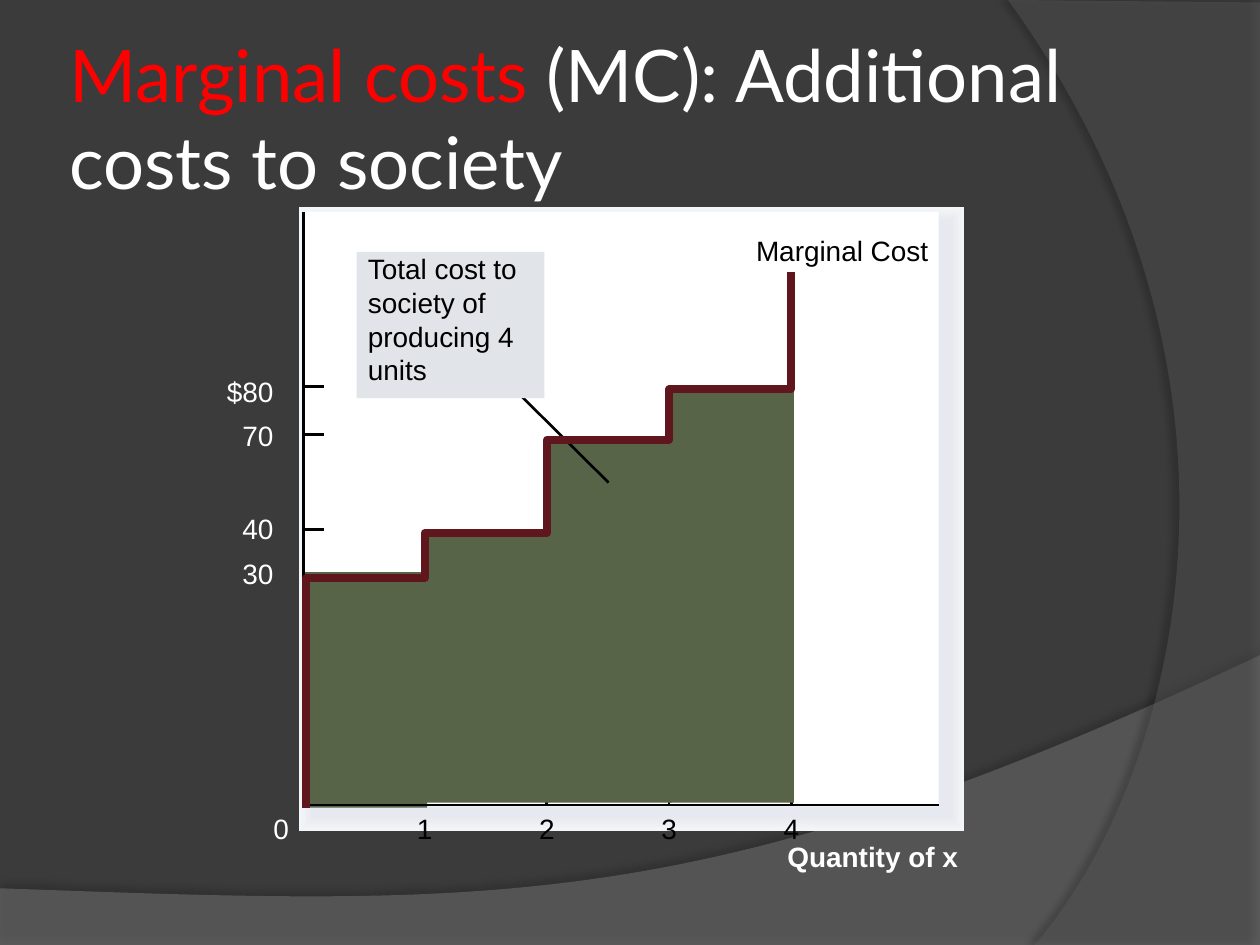
"""Build the slide on marginal costs to society with its stepped cost diagram."""
from dataclasses import dataclass

from lxml.etree import SubElement
from pptx import Presentation
from pptx.dml.color import RGBColor
from pptx.enum.shapes import MSO_CONNECTOR as Connector, MSO_SHAPE as Shape
from pptx.enum.text import MSO_ANCHOR as Anchor, MSO_AUTO_SIZE as AutoSize, PP_ALIGN as Align
from pptx.oxml.ns import qn
from pptx.util import Inches, Pt


@dataclass(frozen=True)
class Theme:
    back: str = "3B3B3B"
    lower_wave: str = "7F7F7F"
    side_wave: str = "5E5E5E"
    light: str = "FFFFFF"
    dark: str = "000000"
    accent: str = "FF0000"
    area: str = "576448"
    step: str = "5F161D"
    callout: str = "E1E5E9"
    title_font: str = "Lato"
    label_font: str = "Arial"
    title_size: float = 41.4
    label_size: float = 16
    thin: float = 1.5
    thick: float = 4.5


theme = Theme()
deck = Presentation()
deck.slide_width, deck.slide_height = Inches(10), Inches(7.5)
page = deck.slides.add_slide(deck.slide_layouts[5])
page.background.fill.solid()
page.background.fill.fore_color.rgb = RGBColor.from_string(theme.back)
shapes = page.shapes


def finish(shape, fill=None, line=None, width=theme.thin):
    """Set fill and line, clear the shadow and return the effect list."""
    if fill:
        shape.fill.solid()
        shape.fill.fore_color.rgb = RGBColor.from_string(fill)
    elif hasattr(shape, "fill"):
        shape.fill.background()
    if line:
        shape.line.color.rgb = RGBColor.from_string(line)
        shape.line.width = Pt(width)
    else:
        shape.line.fill.background()
    return SubElement(shape.element.spPr, qn("a:effectLst"))


def label(text, left, top, width, height=0.27, color=theme.light, align=Align.LEFT, wrap=False):
    """Add a text box without margins and return its paragraph."""
    frame = shapes.add_textbox(*map(Inches, (left, top, width, height))).text_frame
    frame.margin_left = frame.margin_right = frame.margin_top = frame.margin_bottom = 0
    frame.word_wrap = wrap
    para = frame.paragraphs[0]
    para.text, para.alignment = text, align
    para.font.name, para.font.size = theme.label_font, Pt(theme.label_size)
    para.font.color.rgb = RGBColor.from_string(color)
    return para


waves = [
    (theme.lower_wave, 45, 35, 270,
     [(0, 7.05), (0, 7.5), (10, 7.5), (10, 5.2), (5.59, 7.29), (3.91, 7.19), (0, 7.05)]),
    (theme.side_wave, 40, 45, 180,
     [(10, 0.02), (10, 7.5), (8.21, 7.5), (9.35, 6.19), (10.18, 3), (8, 0)]),
]
for color, opacity, shade, direction, points in waves:
    corners = [(Inches(min(x, 10)), Inches(y)) for x, y in points]
    builder = shapes.build_freeform(*corners[0])
    builder.add_line_segments(corners[1:], close=True)
    wave = builder.convert_to_shape()
    segments = list(wave.element.iter(qn("a:lnTo")))
    curve_start = len(points) - 4
    curve = segments[curve_start]
    curve.tag = qn("a:cubicBezTo")
    for segment, (x, _) in zip(segments[curve_start:curve_start + 3], points[-3:]):
        point = segment[0]
        point.set("x", str(Inches(x) - wave.left))
        if segment is not curve:
            curve.append(point)
            segment.getparent().remove(segment)
    effects = finish(wave, color)
    tint = wave.element.spPr.find(qn("a:solidFill"))[0]
    SubElement(tint, qn("a:alpha"), val=str(opacity * 1000))
    shadow = SubElement(effects, qn("a:outerShdw"), blurRad=str(Pt(4)), dist=str(Pt(4)),
                        dir=str(direction * 60000), algn="ctr", rotWithShape="0")
    shadow_color = SubElement(shadow, qn("a:srgbClr"), val=theme.dark)
    SubElement(shadow_color, qn("a:alpha"), val=str(shade * 1000))

title = shapes.title
title.element.getparent().append(title.element)
title.left, title.top, title.width, title.height = map(Inches, (0.5, 0.3, 8.17, 1.25))
frame = title.text_frame
frame.auto_size, frame.vertical_anchor, frame.word_wrap = AutoSize.NONE, Anchor.MIDDLE, True
frame.margin_left = frame.margin_right = frame.margin_top = frame.margin_bottom = Inches(0.05)
para = frame.paragraphs[0]
para.alignment = Align.LEFT
para.font.name, para.font.size = theme.title_font, Pt(theme.title_size)
for text, color in [("Marginal costs", theme.accent),
                    (" (MC): Additional costs to society", theme.light)]:
    span = para.add_run()
    span.text = text
    span.font.color.rgb = RGBColor.from_string(color)

left, top, width, height = 2.41, 1.68, 5.04, 4.72
base = top + height - 0.01
columns = [left - 0.01 + 0.97 * unit for unit in range(5)]
halo = ["F3F6F9", "F2F4F8", "F1F4F7", "F0F2F5", "EEF1F4", "EDEFF3",
        "EBEEF2", "EAECF1", "E9EBF0", "E7EAEF", "E6E9EF"]
for ring, color in enumerate(halo):
    frame_box = shapes.add_shape(
        Shape.RECTANGLE, *map(Inches, (left + 0.08, top + 0.08, width + 0.01, height)))
    finish(frame_box, color, color, 1.5 * (len(halo) - ring))
    SubElement(frame_box.line._ln, qn("a:miter"), lim="800000")
plot = shapes.add_shape(Shape.RECTANGLE, *map(Inches, (left, top, width, height)))
finish(plot, theme.light)

levels = [("30", 4.42, 4.56, 4.54, 4.59), ("40", 4.06, 4.2, 4.25, 4.23),
          ("70", 3.32, 3.45, 3.5, 3.49), ("$80", 2.97, 3.07, 3.08, 3.09)]
ticks = [(left + 0.16, tick, left, tick) for _, _, tick, _, _ in levels]
ticks += [(x, base - 0.16, x, base) for x in columns[1:]]
for ends in ticks:
    finish(shapes.add_connector(Connector.STRAIGHT, *map(Inches, ends)), line=theme.dark)

for unit, (_, _, _, bar_top, _) in enumerate(levels):
    bar_base = base - 0.02 if unit else base + 0.02
    bar = shapes.add_shape(Shape.RECTANGLE, *map(
        Inches, (columns[unit], bar_top, 0.99, bar_base - bar_top)))
    finish(bar, theme.area)

pointer = shapes.add_connector(Connector.STRAIGHT, *map(Inches, (3.74, 2.75, 4.83, 3.83)))
finish(pointer, line=theme.dark)

steps = [(left + 0.02, base + 0.02)]
for unit, (_, _, _, _, step) in enumerate(levels):
    steps += [(steps[-1][0], step), (columns[unit + 1], step)]
steps.append((columns[-1], 2.16))
axes = [(left, top), (left, base), (left + width, base)]
for points, color, weight in [(axes, theme.dark, theme.thin), (steps, theme.step, theme.thick)]:
    points = [(Inches(x), Inches(y)) for x, y in points]
    builder = shapes.build_freeform(*points[0])
    builder.add_line_segments(points[1:], close=False)
    finish(builder.convert_to_shape(), line=color, width=weight)

for text, label_top, _, _, _ in levels:
    label(text, 1.8, label_top, 0.37, align=Align.RIGHT)
label("0", 2.17, 6.44, 0.12)
for unit, x in enumerate(columns[1:], 1):
    label(str(unit), x - 0.06, 6.44, 0.24, color=theme.dark)
label("Quantity of x", 6.25, 6.66, 1.37).font.bold = True
label("Marginal Cost", 6, 1.85, 1.38, color=theme.dark)

callout = shapes.add_shape(Shape.RECTANGLE, *map(Inches, (2.83, 2, 1.49, 1.16)))
finish(callout, theme.callout)
label("Total cost to society of producing 4 units", 2.92, 2, 1.4, 1.08, theme.dark, wrap=True)

deck.save("out.pptx")
